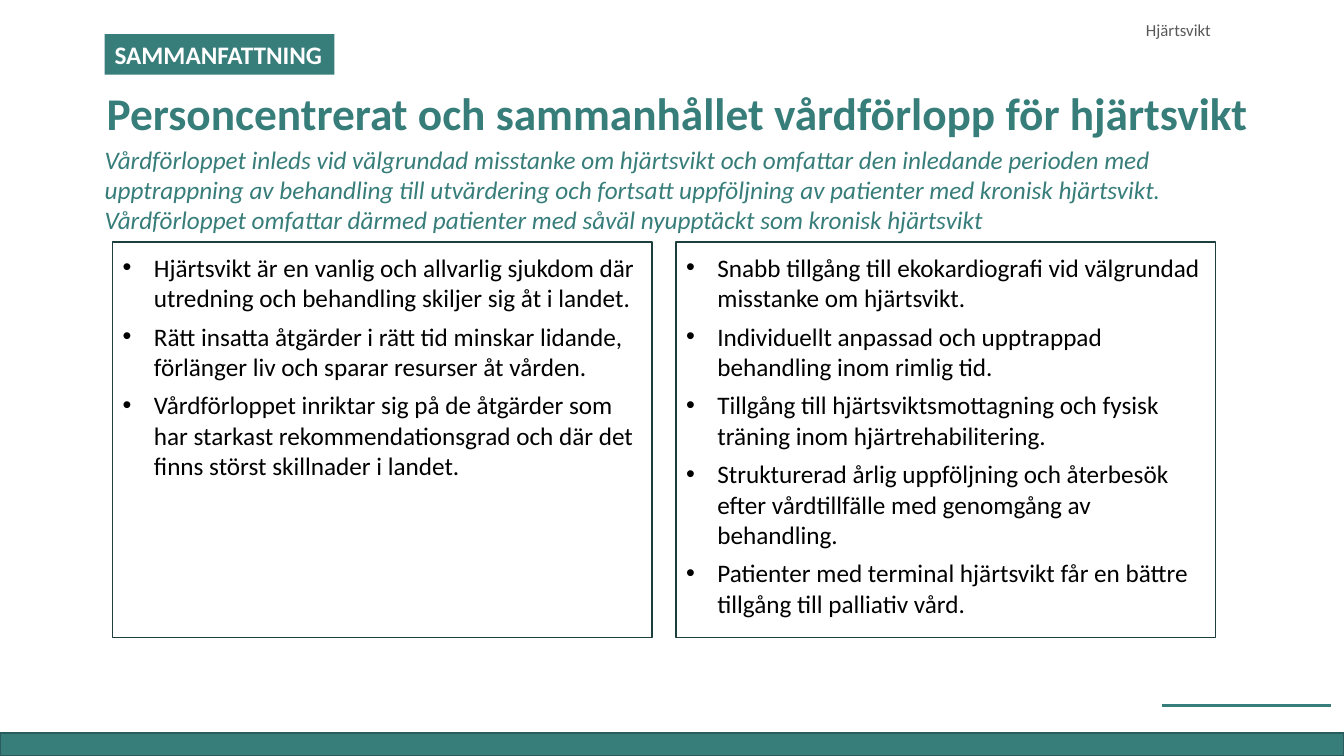
from dataclasses import dataclass

from lxml import etree
from pptx import Presentation
from pptx import util as u
from pptx.dml.color import RGBColor
from pptx.enum import shapes, text
from pptx.oxml import ns

COLORS = {
    "teal": "377D7A", "teal_edge": "295C5A", "panel_edge": "1C3E3D",
    "white": "FFFFFF", "black": "000000", "grey": "595959",
}
FONT = "Calibri"
SLIDE_W, SLIDE_H = 33.87, 19.05
PANEL_LEFT, PANEL_TOP, PANEL_W, PANEL_H, PANEL_PITCH = 2.84, 6.1, 13.59, 9.96, 14.2
BULLET_INDENT = 0.79


@dataclass
class Area:
    left: float
    top: float
    width: float
    height: float

    def lengths(self) -> list:
        return [u.Cm(v) for v in (self.left, self.top, self.width, self.height)]


@dataclass
class Label:
    area: Area
    words: str
    size: float
    color: str
    bold: bool = False
    italic: bool = False
    spacing: float = 1.0
    anchor: text.MSO_ANCHOR = text.MSO_ANCHOR.TOP


def rgb(name: str) -> RGBColor:
    return RGBColor.from_string(COLORS[name])


def style(paragraph, size: float, color: str, bold: bool = False, italic: bool = False) -> None:
    paragraph.alignment = text.PP_ALIGN.LEFT
    font = paragraph.font
    font.name, font.size = FONT, u.Pt(size)
    font.bold, font.italic = bold, italic
    font.color.rgb = rgb(color)


def add_rect(slide, area: Area, fill: str, edge: str | None = None):
    rect = slide.shapes.add_shape(shapes.MSO_SHAPE.RECTANGLE, *area.lengths())
    rect.shadow.inherit = False
    rect.fill.solid()
    rect.fill.fore_color.rgb = rgb(fill)
    if edge:
        rect.line.color.rgb = rgb(edge)
        rect.line.width = u.Pt(1)
    else:
        rect.line.fill.background()
    return rect


def add_label(slide, label: Label) -> None:
    frame = slide.shapes.add_textbox(*label.area.lengths()).text_frame
    frame.word_wrap = True
    frame.vertical_anchor = label.anchor
    line = frame.paragraphs[0]
    line.text = label.words
    line.line_spacing = label.spacing
    style(line, label.size, label.color, label.bold, label.italic)


def add_panel(slide, area: Area, points: list[str]) -> None:
    frame = add_rect(slide, area, "white", "panel_edge").text_frame
    frame.word_wrap = True
    frame.vertical_anchor = text.MSO_ANCHOR.TOP
    frame.margin_top = u.Cm(0.25)
    for index, point in enumerate(points):
        line = frame.add_paragraph() if index else frame.paragraphs[0]
        line.text = point
        if index:
            line.space_before = u.Pt(6)
        props = line._p.get_or_add_pPr()
        props.set("marL", str(u.Cm(BULLET_INDENT)))
        props.set("indent", str(-u.Cm(BULLET_INDENT)))
        etree.SubElement(props, ns.qn("a:buFont"), typeface="Arial")
        etree.SubElement(props, ns.qn("a:buChar"), char="•")
        style(line, 18, "black")


LABELS = [
    Label(Area(2.44, 1.96, 29.41, 1.7),
          "Personcentrerat och sammanhållet vårdförlopp för hjärtsvikt",
          32.4, "teal", bold=True, spacing=0.9, anchor=text.MSO_ANCHOR.BOTTOM),
    Label(Area(2.39, 3.51, 28.63, 3.33),
          "Vårdförloppet inleds vid välgrundad misstanke om hjärtsvikt och omfattar den "
          "inledande perioden med upptrappning av behandling till utvärdering och fortsatt "
          "uppföljning av patienter med kronisk hjärtsvikt. Vårdförloppet omfattar därmed "
          "patienter med såväl nyupptäckt som kronisk hjärtsvikt",
          18, "teal", italic=True),
    Label(Area(28.63, 0.38, 4.32, 0.76), "Hjärtsvikt", 12, "grey"),
]

PANELS = [
    [
        "Hjärtsvikt är en vanlig och allvarlig sjukdom där utredning och behandling "
        "skiljer sig åt i landet.",
        "Rätt insatta åtgärder i rätt tid minskar lidande, förlänger liv och sparar "
        "resurser åt vården.",
        "Vårdförloppet inriktar sig på de åtgärder som har starkast rekommendationsgrad "
        "och där det finns störst skillnader i landet.",
    ],
    [
        "Snabb tillgång till ekokardiografi vid välgrundad misstanke om hjärtsvikt.",
        "Individuellt anpassad och upptrappad behandling inom rimlig tid.",
        "Tillgång till hjärtsviktsmottagning och fysisk träning inom hjärtrehabilitering.",
        "Strukturerad årlig uppföljning och återbesök efter vårdtillfälle med genomgång "
        "av behandling.",
        "Patienter med terminal hjärtsvikt får en bättre tillgång till palliativ vård.",
    ],
]


def main() -> None:
    prs = Presentation()
    prs.slide_width, prs.slide_height = u.Cm(SLIDE_W), u.Cm(SLIDE_H)
    slide = prs.slides.add_slide(prs.slide_layouts[6])

    # Footer band and the rule above it
    add_rect(slide, Area(0, 18.47, SLIDE_W, 0.58), "teal", "teal_edge")
    rule = slide.shapes.add_connector(
        shapes.MSO_CONNECTOR.STRAIGHT, u.Cm(29.29), u.Cm(17.78), u.Cm(33.53), u.Cm(17.78))
    rule.line.color.rgb = rgb("teal")
    rule.line.width = u.Pt(2.5)
    etree.SubElement(rule._element.spPr, ns.qn("a:effectLst"))

    # Section tag
    tag = add_rect(slide, Area(2.64, 0.86, 5.79, 1.02), "teal").text_frame
    tag.word_wrap = False
    tag.text = "SAMMANFATTNING"
    style(tag.paragraphs[0], 18, "white", bold=True)

    # Title, introduction and page header
    for label in LABELS:
        add_label(slide, label)

    # Bullet panels
    for column, points in enumerate(PANELS):
        left = PANEL_LEFT + column * PANEL_PITCH
        add_panel(slide, Area(left, PANEL_TOP, PANEL_W, PANEL_H), points)

    prs.save("out.pptx")


if __name__ == "__main__":
    main()
